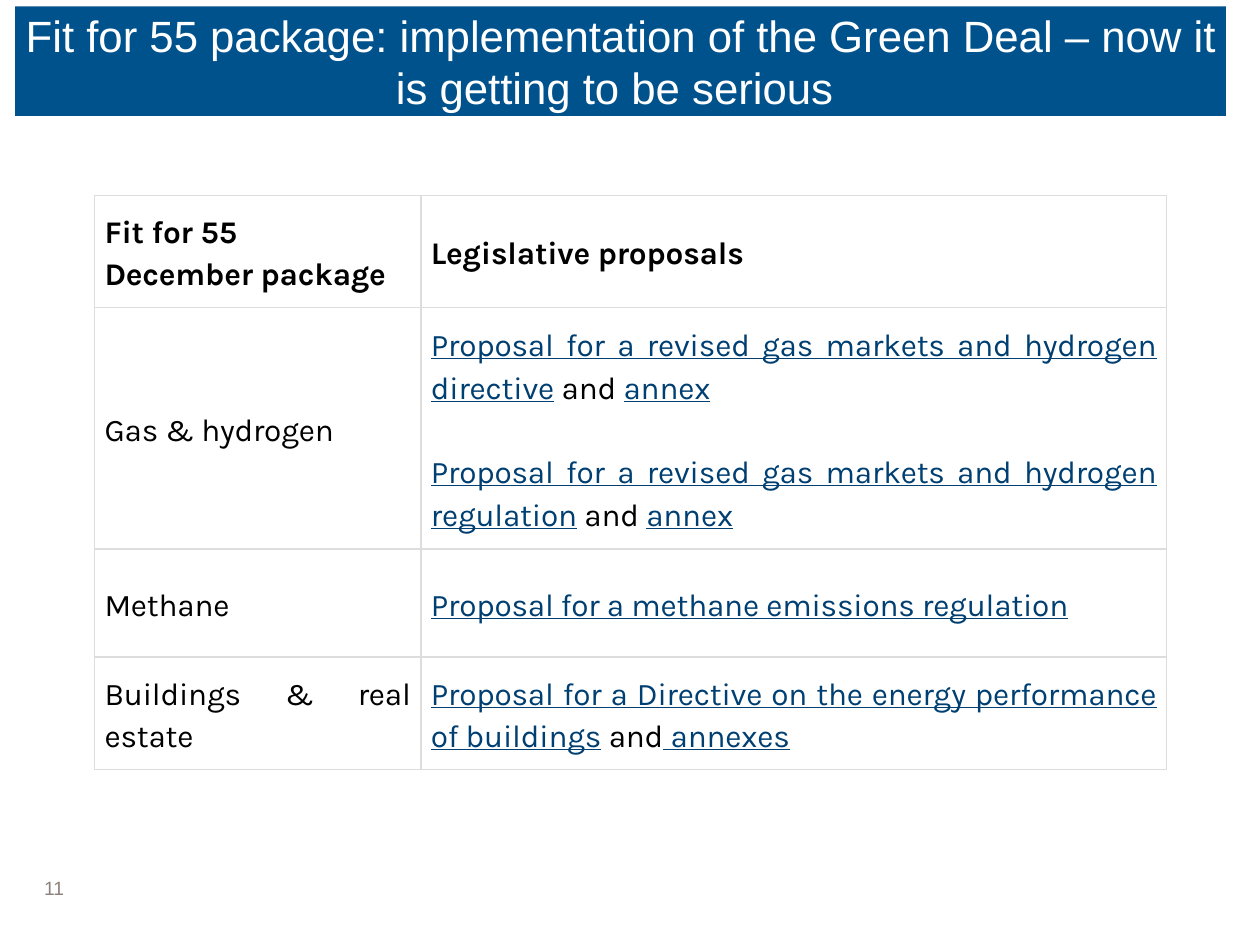
from pptx import Presentation
from pptx import util as u
from pptx.dml.color import RGBColor
from pptx.enum import shapes, text
from pptx.oxml import parse_xml
from pptx.oxml.ns import nsdecls

COLORS = {"banner": "00528D", "white": "FFFFFF", "black": "000000",
          "link": "003F72", "border": "DDDDDD", "number": "8D817B"}
COLUMN_WIDTHS = [2.59, 5.92]
ROW_HEIGHTS = [0.88, 1.89, 0.86, 0.88]

# A cell is a list of paragraphs, a paragraph a list of (text, style) spans.
ROWS = [
    [[[("Fit for 55", "head")], [("December package", "head")]],
     [[("Legislative proposals", "head")]]],
    [[[("Gas & hydrogen", "plain")]],
     [[(f"Proposal for a revised gas markets and hydrogen {act}", "link"),
       ("\N{NO-BREAK SPACE}and\N{NO-BREAK SPACE}", "plain"), ("annex", "link")]
      for act in ("directive", "regulation")]],
    [[[("Methane", "plain")]],
     [[("Proposal for a methane emissions regulation", "link")]]],
    [[[("Buildings & real estate", "plain")]],
     [[("Proposal for a Directive on the energy performance of buildings", "link"),
       ("\N{NO-BREAK SPACE}and", "plain"),
       ("\N{NO-BREAK SPACE}annexes", "link")]]],
]
STYLES = {"head": {"bold": True}, "plain": {},
          "link": {"color": "link", "underline": True}}


def rgb(name):
    return RGBColor.from_string(COLORS[name])


def add_span(para, words, size=18, font="Karla", color="black",
             bold=False, underline=False, spacing=None):
    span = para.add_run()
    span.text = words
    span.font.size = u.Pt(size)
    span.font.name = font
    span.font.bold = bold
    span.font.underline = underline
    span.font.color.rgb = rgb(color)
    if spacing is not None:
        span.font._element.set("spc", str(round(spacing * 100)))


def set_margins(target, side, top):
    target.margin_left = target.margin_right = u.Inches(side)
    target.margin_top = target.margin_bottom = u.Inches(top)


def add_banner(page, left, top, width, height):
    banner = page.shapes.add_shape(
        shapes.MSO_SHAPE.RECTANGLE, *map(u.Inches, (left, top, width, height)))
    banner.shadow.inherit = False
    banner.fill.solid()
    banner.fill.fore_color.rgb = rgb("banner")
    banner.line.fill.background()
    frame = banner.text_frame
    frame.word_wrap = True
    frame.vertical_anchor = text.MSO_ANCHOR.MIDDLE
    set_margins(frame, 0.02, 0)
    para = frame.paragraphs[0]
    para.alignment = text.PP_ALIGN.CENTER
    add_span(para, "Fit for 55 package: implementation of the Green Deal – "
             "now it is getting to be serious ", size=25, font="Arial", color="white")


def add_borders(cell):
    props = cell._tc.get_or_add_tcPr()
    for index, side in enumerate(("lnL", "lnR", "lnT", "lnB")):
        props.insert(index, parse_xml(
            f'<a:{side} {nsdecls("a")} w="{u.Pt(1)}"><a:solidFill>'
            f'<a:srgbClr val="{COLORS["border"]}"/></a:solidFill></a:{side}>'))


def fill_cell(cell, paragraphs, gap):
    """Write the paragraphs, with gap points between those that hold links."""
    cell.fill.background()
    cell.vertical_anchor = text.MSO_ANCHOR.MIDDLE
    set_margins(cell, 0.08, 0.1)
    add_borders(cell)
    frame = cell.text_frame
    for index, spans in enumerate(paragraphs):
        para = frame.add_paragraph() if index else frame.paragraphs[0]
        para.alignment = text.PP_ALIGN.JUSTIFY
        para.line_spacing = 1.15
        if index and spans[0][1] == "link":
            para.space_before = u.Pt(gap)
        for words, style in spans:
            add_span(para, words, spacing=-0.1, **STYLES[style])


def add_proposals(page, left, top):
    table = page.shapes.add_table(
        len(ROW_HEIGHTS), len(COLUMN_WIDTHS), u.Inches(left), u.Inches(top),
        u.Inches(sum(COLUMN_WIDTHS)), u.Inches(sum(ROW_HEIGHTS))).table
    table.first_row = table.horz_banding = False
    for column, width in zip(table.columns, COLUMN_WIDTHS):
        column.width = u.Inches(width)
    for row, height, contents in zip(table.rows, ROW_HEIGHTS, ROWS):
        row.height = u.Inches(height)
        for cell, paragraphs in zip(row.cells, contents):
            fill_cell(cell, paragraphs, gap=24.2)


def add_page_number(page, left, top, width, height):
    box = page.shapes.add_textbox(*map(u.Inches, (left, top, width, height)))
    frame = box.text_frame
    frame.word_wrap = True
    frame.vertical_anchor = text.MSO_ANCHOR.BOTTOM
    set_margins(frame, 0, 0)
    add_span(frame.paragraphs[0], "11", size=11, font="Arial", color="number")


def main():
    deck = Presentation()
    deck.slide_width, deck.slide_height = u.Inches(10), u.Inches(7.5)
    page = deck.slides.add_slide(deck.slide_layouts[6])
    add_page_number(page, 0.35, 6.79, 0.39, 0.35)
    add_banner(page, 0.12, 0.05, 9.61, 0.87)
    add_proposals(page, 0.75, 1.55)
    deck.save("out.pptx")


if __name__ == "__main__":
    main()
